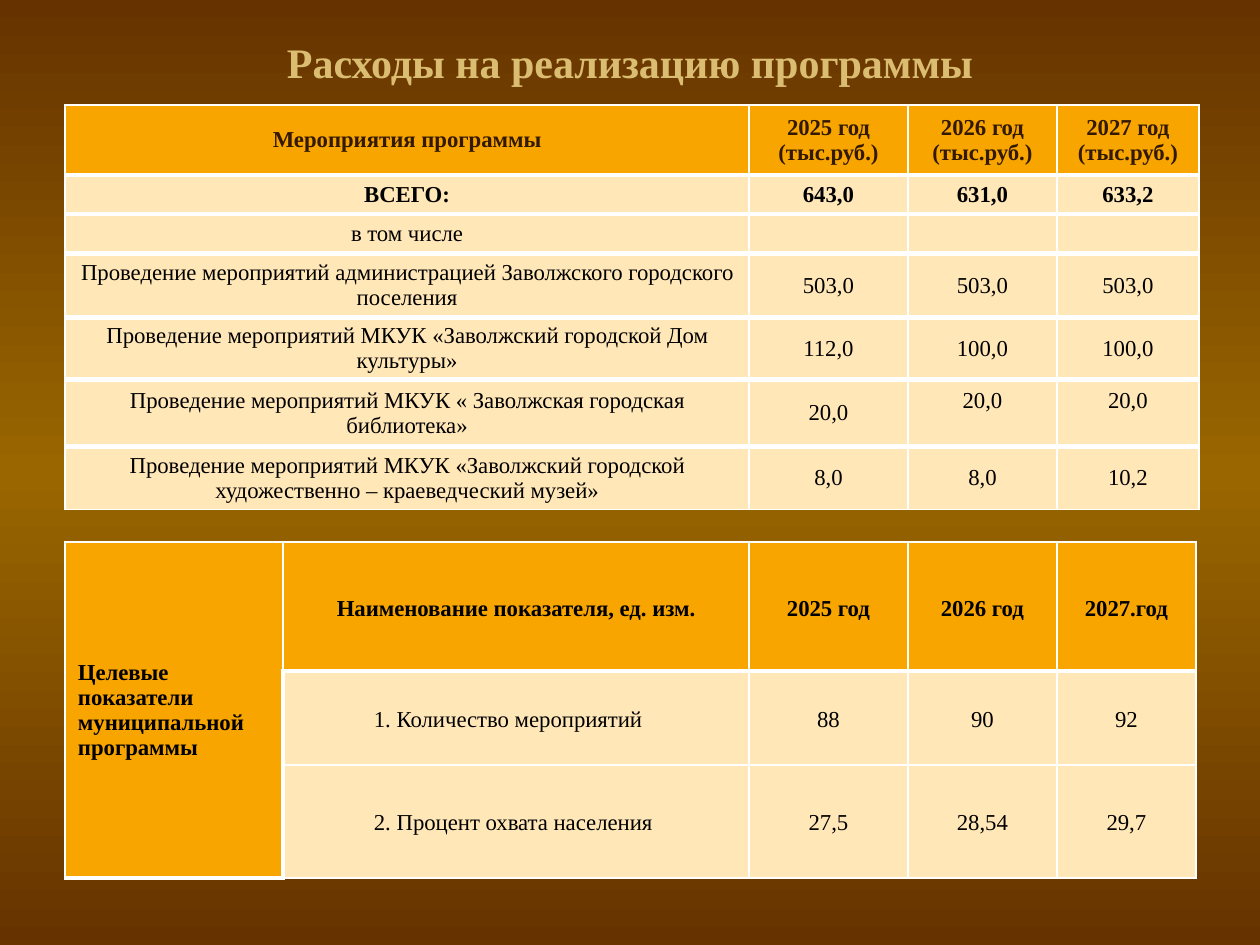
from copy import deepcopy

from lxml import etree
from pptx import Presentation
from pptx.dml.color import RGBColor
from pptx.enum.text import MSO_ANCHOR, MSO_AUTO_SIZE, PP_ALIGN
from pptx.oxml.ns import qn
from pptx.util import Pt

PIXEL = 914400 / 126
LEFT, CENTER = PP_ALIGN.LEFT, PP_ALIGN.CENTER
MIDDLE = MSO_ANCHOR.MIDDLE
NO_FIT = MSO_AUTO_SIZE.NONE
TITLE_ONLY = 5

TABLE_LEFT = 65
YEAR_COLUMNS = [159, 149]
COST_COLUMNS = [684, *YEAR_COLUMNS, 142]
COST_ROWS = [70, 39, 39, 64, 62, 67, 63]
TARGET_COLUMNS = [218, 466, *YEAR_COLUMNS, 139]
TARGET_ROWS = [129, 94, 113]
TOTAL_ROW, LIBRARY_ROW = 1, 5
RAISED_COLUMNS = (2, 3)
RAISED_BOTTOM, INDICATOR_LEFT = 31, 91
ROOMY, TIGHT = (13, 6), (9, 0)

YEARS = ["2025 год", "2026 год", "2027 год"]
COSTS = [
    ["Мероприятия программы", *[f"{year}\n(тыс.руб.)" for year in YEARS]],
    ["ВСЕГО:", "643,0", "631,0", "633,2"],
    ["в том числе", "", "", ""],
    ["Проведение мероприятий администрацией Заволжского городского поселения", "503,0", "503,0", "503,0"],
    ["Проведение мероприятий МКУК «Заволжский городской Дом культуры»", "112,0", "100,0", "100,0"],
    ["Проведение мероприятий МКУК « Заволжская городская библиотека»", "20,0", "20,0", "20,0"],
    ["Проведение мероприятий МКУК «Заволжский городской художественно – краеведческий музей»", "8,0", "8,0", "10,2"],
]
TARGETS = [
    ["Целевые показатели муниципальной программы", "Наименование показателя, ед. изм.", *YEARS[:2], "2027.год"],
    ["", "1. Количество мероприятий", "88", "90", "92"],
    ["", "2. Процент охвата населения", "27,5", "28,54", "29,7"],
]


def px(length):
    return round(length * PIXEL)


def color(value):
    return RGBColor.from_string(value)


def write(frame, text, size=13, ink="000000", bold=False, align=CENTER, spacing=1.0):
    for index, line in enumerate(text.split("\n")):
        para = frame.add_paragraph() if index else frame.paragraphs[0]
        para.alignment = align
        para.line_spacing = spacing
        if not line:
            para._p.get_or_add_endParaRPr().set("sz", str(size * 100))
            continue
        span = para.add_run()
        span.text = line
        span.font.name = "Times New Roman"
        span.font.size = Pt(size)
        span.font.bold = bold
        span.font.color.rgb = color(ink)


class Slide:
    head_fill, body_fill, border = "F8A500", "FFE7B8", "FFFFFF"
    head_ink, body_ink, title_ink = "331900", "000000", "DBBD71"
    thin, thick = 1, 3

    def __init__(self, deck):
        self.page = deck.slides.add_slide(deck.slide_layouts[TITLE_ONLY])

    def background(self, edge, middle):
        fill = self.page.background.fill
        fill.gradient()
        fill.gradient_angle = 90
        for stop, shade in zip(fill.gradient_stops, (edge, middle)):
            stop.color.rgb = color(shade)
        stops = self.page._element.find(".//" + qn("a:gsLst"))
        stops.append(deepcopy(stops[0]))
        for stop, position in zip(stops, (0, 50000, 100000)):
            stop.set("pos", str(position))

    def title(self, text, left, top, width, height):
        box = self.page.shapes.title
        box.left, box.top, box.width, box.height = map(px, (left, top, width, height))
        frame = box.text_frame
        frame.auto_size = NO_FIT
        frame.vertical_anchor = MIDDLE
        frame.margin_top = frame.margin_bottom = 0
        write(frame, text, size=24, ink=self.title_ink, bold=True)

    def table(self, left, top, columns, rows):
        table = self.page.shapes.add_table(
            len(rows), len(columns), px(left), px(top), px(sum(columns)), px(sum(rows))
        ).table
        table.first_row = table.horz_banding = False
        for column, width in zip(table.columns, columns):
            column.width = px(width)
        for row, height in zip(table.rows, rows):
            row.height = px(height)
        return table

    def borders(self, cell, left, right, top, bottom):
        props = cell._tc.get_or_add_tcPr()
        sides = {"a:lnL": left, "a:lnR": right, "a:lnT": top, "a:lnB": bottom}
        for index, (tag, weight) in enumerate(sides.items()):
            line = etree.Element(qn(tag), w=str(Pt(weight)))
            solid = etree.SubElement(line, qn("a:solidFill"))
            etree.SubElement(solid, qn("a:srgbClr"), val=self.border)
            props.insert(index, line)

    def cell(self, cell, text, heading, weights, margins, **style):
        side, edge = margins
        cell.vertical_anchor = MIDDLE
        cell.margin_left = cell.margin_right = px(side)
        cell.margin_top = cell.margin_bottom = px(edge)
        self.borders(cell, *weights)
        cell.fill.solid()
        cell.fill.fore_color.rgb = color(self.head_fill if heading else self.body_fill)
        write(cell.text_frame, text, **style)

    def costs(self, top):
        table = self.table(TABLE_LEFT, top, COST_COLUMNS, COST_ROWS)
        lines = [self.thin] + [self.thick] * (len(COSTS) - 1) + [self.thin]
        for row, texts in enumerate(COSTS):
            heading = row == 0
            weights = (self.thin, self.thin, lines[row], lines[row + 1])
            ink = self.head_ink if heading else self.body_ink
            for column, text in enumerate(texts):
                self.cell(
                    table.cell(row, column), text, heading, weights, ROOMY,
                    ink=ink, bold=row <= TOTAL_ROW,
                )
        for column in RAISED_COLUMNS:
            table.cell(LIBRARY_ROW, column).margin_bottom = px(RAISED_BOTTOM)

    def targets(self, top):
        table = self.table(TABLE_LEFT, top, TARGET_COLUMNS, TARGET_ROWS)
        lines = [self.thin, self.thick, self.thin, self.thin]
        for row, texts in enumerate(TARGETS):
            divider = self.thick if row else self.thin
            label, indicator, *values = texts
            self.cell(
                table.cell(row, 0), label, True,
                (self.thin, divider, lines[row], self.thick), ROOMY, bold=True, align=LEFT,
            )
            for column, text in enumerate([indicator, *values], start=1):
                left_line = divider if column == 1 else self.thin
                is_indicator = column == 1 and row > 0
                cell = table.cell(row, column)
                self.cell(
                    cell, text, row == 0,
                    (left_line, self.thin, lines[row], lines[row + 1]), TIGHT,
                    bold=row == 0, align=LEFT if is_indicator else CENTER, spacing=1.15,
                )
                if is_indicator:
                    cell.margin_left = px(INDICATOR_LEFT)
        table.cell(0, 0).merge(table.cell(len(TARGETS) - 1, 0))


def main():
    deck = Presentation()
    deck.slide_width, deck.slide_height = px(1260), px(945)
    slide = Slide(deck)
    slide.background("663300", "996600")
    slide.title("Расходы на реализацию программы", 63, 38, 1134, 48)
    slide.targets(542)
    slide.costs(105)
    deck.save("out.pptx")


if __name__ == "__main__":
    main()
